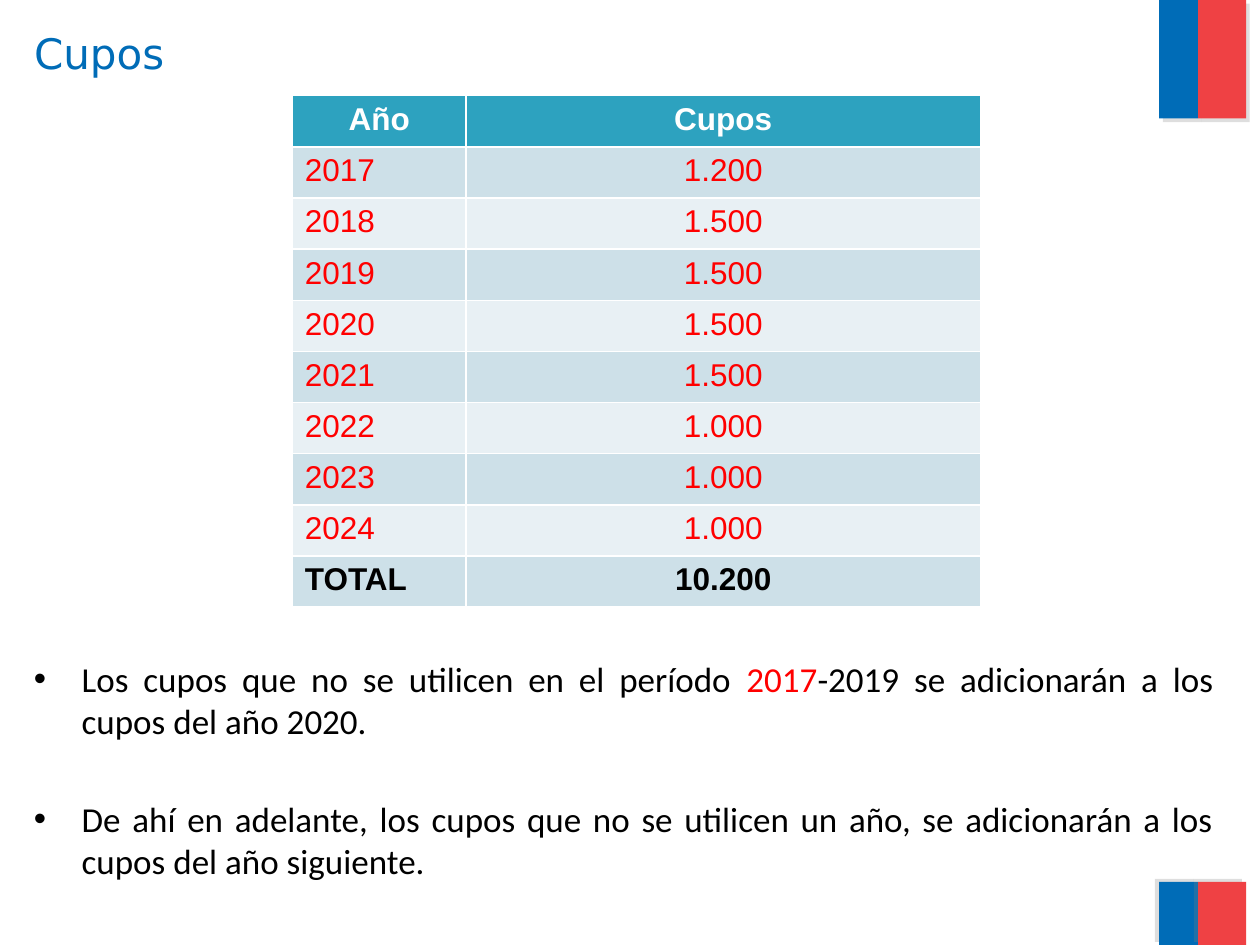
"""Builds the slide on yearly quotas: a table of places per year and two rules."""
from lxml import etree
from pptx import Presentation
from pptx.dml.color import RGBColor
from pptx.enum.shapes import MSO_SHAPE
from pptx.enum.text import MSO_ANCHOR, PP_ALIGN
from pptx.oxml import parse_xml
from pptx.oxml.ns import nsdecls, qn
from pptx.util import Inches, Pt

RECTANGLE = MSO_SHAPE.RECTANGLE
TOP = MSO_ANCHOR.TOP
LEFT, CENTER, JUSTIFY = PP_ALIGN.LEFT, PP_ALIGN.CENTER, PP_ALIGN.JUSTIFY
BLUE, RED, TEXT_RED = "006CB7", "EF4144", "FF0000"
BLACK, WHITE = "000000", "FFFFFF"
HEADER_FILL, BAND_FILLS = "2DA2BF", ("E8F0F4", "CDE0E8")


def color(value):
    """Turns a hex string into a colour."""
    return RGBColor.from_string(value)


def set_font(font, name, size, value, bold=False):
    """Sets typeface, size, colour and weight."""
    font.name, font.size, font.bold = name, Pt(size), bold
    font.color.rgb = color(value)


deck = Presentation()
deck.slide_width, deck.slide_height = Inches(10), Inches(7.5)
page = deck.slides.add_slide(deck.slide_layouts[5])

for top, height, angle in ((0, 0.94, 45), (7, 0.5, 215)):
    for left, width, fill in ((9.2, 0.31, BLUE), (9.51, 0.38, RED)):
        band = page.shapes.add_shape(
            RECTANGLE, Inches(left), Inches(top), Inches(width), Inches(height))
        band.fill.solid()
        band.fill.fore_color.rgb = color(fill)
        band.line.fill.background()
        band.shadow.inherit = False
        effects = band.element.spPr.find(qn("a:effectLst"))
        effects.append(parse_xml(
            f'<a:outerShdw {nsdecls("a")} dist="{Pt(3)}" dir="{angle * 60000}">'
            '<a:srgbClr val="808080"><a:alpha val="25000"/></a:srgbClr></a:outerShdw>'))

title = page.shapes.title
title.left, title.top = Inches(0.17), Inches(0.17)
title.width, title.height = Inches(8.93), Inches(1.25)
title.text_frame.text = "Cupos"
title.text_frame.vertical_anchor = TOP
para = title.text_frame.paragraphs[0]
para.alignment = LEFT
set_font(para.font, "DejaVu Sans", 24, BLUE)

rules = (
    (("Los cupos que no se utilicen en el período ", BLACK), ("2017", TEXT_RED),
     ("-2019 se adicionarán a los cupos del año 2020. ", BLACK)),
    (("De ahí en adelante, los cupos que no se utilicen un año, "
      "se adicionarán a los cupos del año siguiente.", BLACK),),
)
box = page.shapes.add_textbox(Inches(0.17), Inches(5.17), Inches(9.56), Inches(1.89))
frame = box.text_frame
frame.word_wrap = True
for index, rule in enumerate(rules):
    para = frame.add_paragraph() if index else frame.paragraphs[0]
    para.alignment = JUSTIFY
    para.space_before = Pt(32 if index else 0)
    para.font.name, para.font.size = "Calibri", Pt(20)
    for text, value in rule:
        span = para.add_run()
        span.text = text
        span.font.color.rgb = color(value)
    properties = para._p.get_or_add_pPr()
    properties.set("marL", str(Inches(0.38)))
    properties.set("indent", str(-Inches(0.38)))
    bullet_font = etree.Element(qn("a:buFont"), typeface="Arial")
    bullet = etree.Element(qn("a:buChar"), char="•")
    properties.insert_element_before(bullet_font, "a:defRPr")
    properties.insert_element_before(bullet, "a:defRPr")

rows = (
    ("Año", "Cupos"),
    ("2017", "1.200"),
    ("2018", "1.500"),
    ("2019", "1.500"),
    ("2020", "1.500"),
    ("2021", "1.500"),
    ("2022", "1.000"),
    ("2023", "1.000"),
    ("2024", "1.000"),
    ("TOTAL", "10.200"),
)
last = len(rows) - 1
quotas = page.shapes.add_table(
    len(rows), 2, Inches(2.32), Inches(0.76), Inches(5.46), Inches(4.06)).table
quotas.columns[0].width, quotas.columns[1].width = Inches(1.38), Inches(4.08)
for row, values in enumerate(rows):
    fill = BAND_FILLS[row % 2] if row else HEADER_FILL
    ink = {0: WHITE, last: BLACK}.get(row, TEXT_RED)
    for column, value in enumerate(values):
        cell = quotas.cell(row, column)
        cell.fill.solid()
        cell.fill.fore_color.rgb = color(fill)
        cell.text = value
        para = cell.text_frame.paragraphs[0]
        para.alignment = CENTER if column or not row else LEFT
        set_font(para.font, "Arial", 18, ink, row in (0, last))

deck.save("out.pptx")
